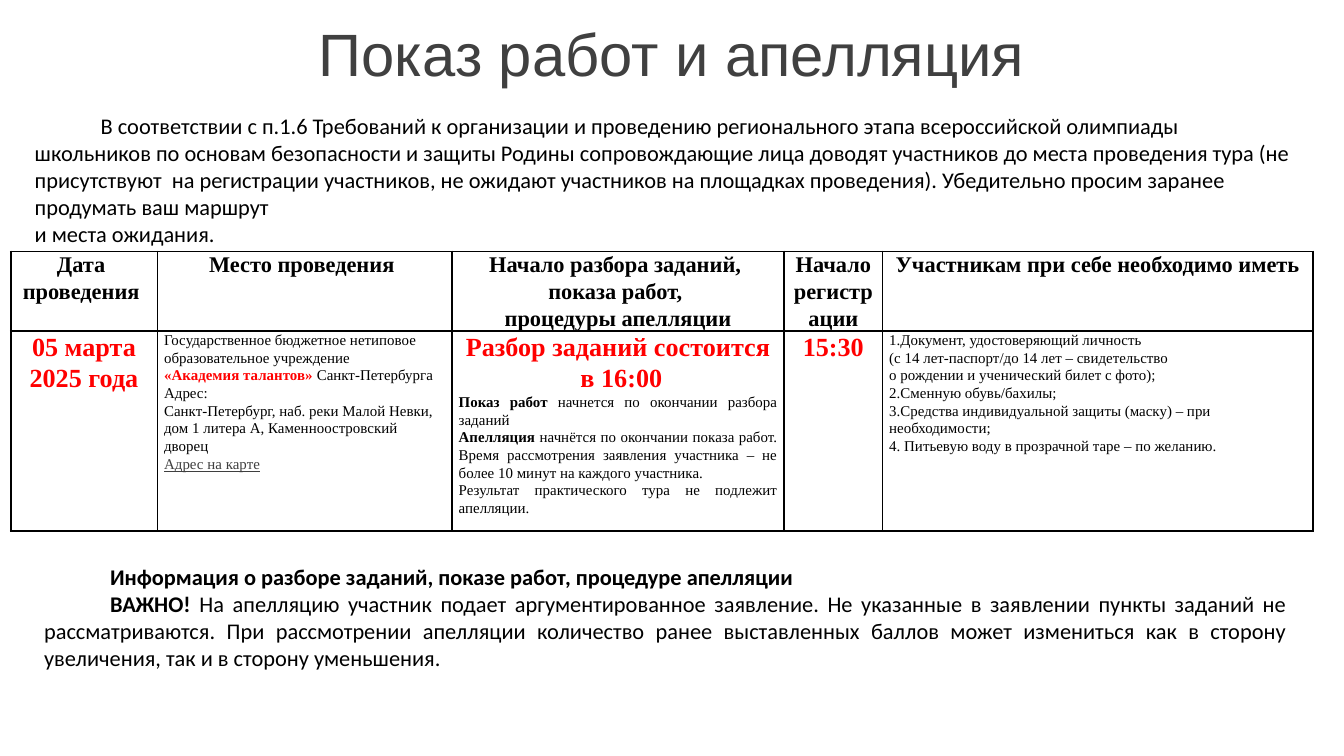
from lxml import etree
from pptx import Presentation
from pptx import util as u
from pptx.dml.color import RGBColor
from pptx.enum import text
from pptx.oxml import ns

COLORS = {"title": "404040", "body": "000000", "accent": "FF0000", "link": "3F3F3F", "border": "000000"}
CENTER, LEFT, JUSTIFY = text.PP_ALIGN.CENTER, text.PP_ALIGN.LEFT, text.PP_ALIGN.JUSTIFY
MIDDLE, TOP = text.MSO_ANCHOR.MIDDLE, text.MSO_ANCHOR.TOP

TITLE = {"name": "Arial", "size": 32, "color": "title"}
BODY = {"name": "Calibri", "size": 12, "color": "body"}
BODY_BOLD = {**BODY, "bold": True}
CELL = {"name": "Times New Roman", "size": 8, "color": "body", "bold": False}
CELL_BOLD = {**CELL, "bold": True}
CELL_ACCENT = {**CELL_BOLD, "color": "accent"}
CELL_LINK = {**CELL, "color": "link", "underline": True}
HEAD = {**CELL_BOLD, "size": 12}
BIG = {**CELL_ACCENT, "size": 14}

INTRO = [(LEFT, [(
    "В соответствии с п.1.6 Требований к организации и проведению регионального этапа "
    "всероссийской олимпиады школьников по основам безопасности и защиты Родины сопровождающие "
    "лица доводят участников до места проведения тура (не присутствуют  на регистрации "
    "участников, не ожидают участников на площадках проведения). Убедительно просим заранее "
    "продумать ваш маршрут \nи места ожидания.", BODY)])]

NOTICE = [
    (JUSTIFY, [("Информация о разборе заданий, показе работ, процедуре апелляции", BODY_BOLD)]),
    (JUSTIFY, [("ВАЖНО!", BODY_BOLD), (
        " На апелляцию участник подает аргументированное заявление. Не указанные в заявлении "
        "пункты заданий не рассматриваются. При рассмотрении апелляции количество ранее "
        "выставленных баллов может измениться как в сторону увеличения, так и в сторону "
        "уменьшения. ", BODY)]),
]


def lines(align, fmt, *texts):
    return [(align, [(t, fmt)]) for t in texts]


HEADER = [lines(CENTER, HEAD, *texts) for texts in (
    ("Дата ", "проведения "),
    ("Место проведения ",),
    ("Начало разбора заданий, ", "показа работ, ", "процедуры апелляции"),
    ("Начало регистрации",),
    ("Участникам при себе необходимо иметь",),
)]

DETAILS = [
    lines(CENTER, BIG, "05 марта", "2025 года"),
    lines(LEFT, CELL, "Государственное бюджетное нетиповое образовательное учреждение")
    + [(LEFT, [("«Академия талантов» ", CELL_ACCENT), ("Санкт-Петербурга", CELL)])]
    + lines(LEFT, CELL, "Адрес:", "Санкт-Петербург, наб. реки Малой Невки,",
            "дом 1 литера А, Каменноостровский", "дворец")
    + lines(LEFT, CELL_LINK, "Адрес на карте"),
    lines(CENTER, BIG, "Разбор заданий состоится", " в 16:00")
    + [(JUSTIFY, [("Показ работ", CELL_BOLD), (" начнется по окончании разбора заданий", CELL)]),
       (JUSTIFY, [("Апелляция", CELL_BOLD), (" начнётся по окончании показа работ. ", CELL)])]
    + lines(JUSTIFY, CELL,
            "Время рассмотрения заявления участника – не более 10 минут на каждого участника.",
            "Результат практического тура не подлежит апелляции."),
    lines(CENTER, BIG, "15:30"),
    lines(LEFT, CELL,
          "1.Документ, удостоверяющий личность \n(с 14 лет-паспорт/до 14 лет – свидетельство "
          "\nо рождении и ученический билет с фото);",
          "2.Сменную обувь/бахилы;",
          "3.Средства индивидуальной защиты (маску) – при необходимости;",
          "4. Питьевую воду в прозрачной таре – по желанию."),
]
COLUMN_SHARES = (1.09, 2.19, 2.47, 0.73, 3.2)
ROW_HEIGHTS = (0.45, 1.49)


def add_run(p, content, fmt):
    for i, part in enumerate(content.split("\n")):
        if i:
            p.add_line_break()
        r = p.add_run()
        r.text = part
        for key, value in fmt.items():
            if key == "color":
                r.font.color.rgb = RGBColor.from_string(COLORS[value])
            else:
                setattr(r.font, key, u.Pt(value) if key == "size" else value)


def write(tf, paragraphs, spacing=None, indent=0):
    for i, (align, runs) in enumerate(paragraphs):
        p = tf.paragraphs[0] if i == 0 else tf.add_paragraph()
        p.alignment = align
        if spacing:
            p.line_spacing = spacing
        if indent:
            pPr = p._p.get_or_add_pPr()
            pPr.set("marL", "0")
            pPr.set("indent", str(u.Inches(indent)))
        for content, fmt in runs:
            add_run(p, content, fmt)


def add_title(s, x, y, w, h):
    sp = s.shapes.title
    sp.left, sp.top, sp.width, sp.height = map(u.Inches, (x, y, w, h))
    tf = sp.text_frame
    tf.auto_size = text.MSO_AUTO_SIZE.NONE
    tf.vertical_anchor = MIDDLE
    write(tf, lines(CENTER, TITLE, "Показ работ и апелляция"))


def add_note(s, x, y, w, h, paragraphs, anchor):
    tf = s.shapes.add_textbox(*map(u.Inches, (x, y, w, h))).text_frame
    tf.word_wrap = True
    tf.auto_size = text.MSO_AUTO_SIZE.SHAPE_TO_FIT_TEXT
    tf.vertical_anchor = anchor
    write(tf, paragraphs, indent=0.49)


def set_borders(cell):
    tcPr = cell._tc.get_or_add_tcPr()
    for i, side in enumerate(("lnL", "lnR", "lnT", "lnB")):
        ln = etree.Element(ns.qn(f"a:{side}"), w=str(u.Pt(1)))
        fill = etree.SubElement(ln, ns.qn("a:solidFill"))
        etree.SubElement(fill, ns.qn("a:srgbClr"), val=COLORS["border"])
        tcPr.insert(i, ln)


def add_schedule(s, x, y, w, h):
    rows = [HEADER, DETAILS]
    frame = s.shapes.add_table(len(rows), len(HEADER), *map(u.Inches, (x, y, w, h)))
    table = frame.table
    table.first_row = table.horz_banding = False
    for col, share in zip(table.columns, COLUMN_SHARES):
        col.width = u.Inches(w * share / sum(COLUMN_SHARES))
    for row, height, contents in zip(table.rows, ROW_HEIGHTS, rows):
        row.height = u.Inches(height)
        for cell, paragraphs in zip(row.cells, contents):
            cell.margin_left = cell.margin_right = u.Inches(0.05)
            cell.margin_top = cell.margin_bottom = 0
            cell.fill.background()
            set_borders(cell)
            write(cell.text_frame, paragraphs, spacing=1.07)
    frame.height = u.Inches(h)


def main():
    prs = Presentation()
    prs.slide_width = u.Inches(10)
    prs.slide_height = prs.slide_width * 9 // 16
    s = prs.slides.add_slide(prs.slide_layouts[5])
    add_title(s, 0, 0, 10, 0.78)
    add_schedule(s, 0.08, 1.87, 9.69, 2.14)
    add_note(s, 0.16, 0.78, 9.61, 1.11, INTRO, MIDDLE)
    add_note(s, 0.23, 4.14, 9.45, 1.21, NOTICE, TOP)
    prs.save("out.pptx")


if __name__ == "__main__":
    main()
